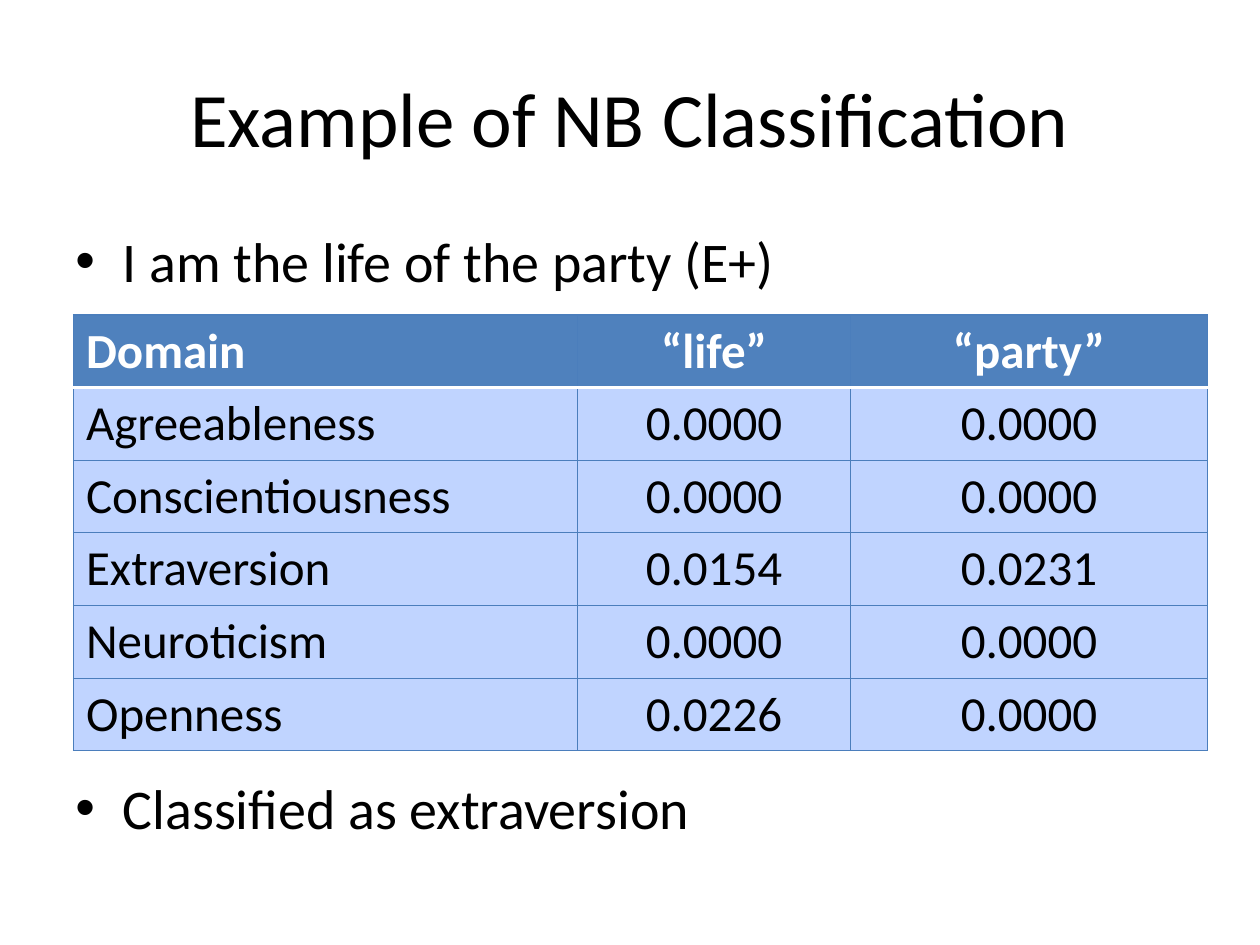
from dataclasses import dataclass

import pptx
import pptx.dml.color
import pptx.enum.text
import pptx.oxml
import pptx.oxml.ns
import pptx.util

Pt = pptx.util.Pt
ALIGN = pptx.enum.text.PP_ALIGN
ANCHOR = pptx.enum.text.MSO_ANCHOR
NS = pptx.oxml.ns.nsdecls("a")
FONT = "Calibri"
BLACK, WHITE, BORDER = "000000", "FFFFFF", "4B7EBC"
HEADER_FILL, BODY_FILL = "4F81BD", "C0D4FF"


@dataclass
class DomainRow:
    name: str
    life: str
    party: str


ROWS = [
    DomainRow("Domain", "“life”", "“party”"),
    DomainRow("Agreeableness", "0.0000", "0.0000"),
    DomainRow("Conscientiousness", "0.0000", "0.0000"),
    DomainRow("Extraversion", "0.0154", "0.0231"),
    DomainRow("Neuroticism", "0.0000", "0.0000"),
    DomainRow("Openness", "0.0226", "0.0000"),
]
COL_WIDTHS = [288, 156, 204]
ROW_HEIGHT = 41.5


def rgb(value: str) -> pptx.dml.color.RGBColor:
    return pptx.dml.color.RGBColor.from_string(value)


def write(p, text: str, *, size: float, color: str = BLACK, bold: bool = False,
          align=ALIGN.LEFT, before: float = 0) -> None:
    p.alignment = align
    p.space_before = Pt(before)
    r = p.add_run()
    r.text = text
    r.font.name, r.font.size, r.font.bold = FONT, Pt(size), bold
    r.font.color.rgb = rgb(color)


def add_box(s, left: float, top: float, width: float, height: float, anchor):
    tf = s.shapes.add_textbox(Pt(left), Pt(top), Pt(width), Pt(height)).text_frame
    tf.word_wrap = True
    tf.vertical_anchor = anchor
    return tf


def add_bullet(p, indent: float) -> None:
    pPr = p._p.get_or_add_pPr()
    pPr.set("marL", str(Pt(indent)))
    pPr.set("indent", str(-Pt(indent)))
    pPr.append(pptx.oxml.parse_xml(f'<a:buFont {NS} typeface="Arial"/>'))
    pPr.append(pptx.oxml.parse_xml(f'<a:buChar {NS} char="•"/>'))


def add_border(cell, side: str, color: str, width: float) -> None:
    cell._tc.get_or_add_tcPr().append(pptx.oxml.parse_xml(
        f'<a:ln{side} {NS} w="{Pt(width)}"><a:solidFill><a:srgbClr val="{color}"/>'
        f'</a:solidFill></a:ln{side}>'))


def format_cell(cell, text: str, row: int, col: int) -> None:
    header = row == 0
    for side in "LRTB":
        under_header = (row, side) in ((0, "B"), (1, "T"))
        add_border(cell, side, *((WHITE, 2) if under_header else (BORDER, 0.75)))
    cell.fill.solid()
    cell.fill.fore_color.rgb = rgb(HEADER_FILL if header else BODY_FILL)
    cell.vertical_anchor = ANCHOR.MIDDLE
    write(cell.text_frame.paragraphs[0], text, size=28, bold=header,
          color=WHITE if header else BLACK,
          align=ALIGN.CENTER if col else ALIGN.LEFT)


def add_domain_table(s, rows: list[DomainRow], left: float, top: float) -> None:
    table = s.shapes.add_table(len(rows), len(COL_WIDTHS), Pt(left), Pt(top),
                               Pt(sum(COL_WIDTHS)), Pt(ROW_HEIGHT * len(rows))).table
    for column, width in zip(table.columns, COL_WIDTHS):
        column.width = Pt(width)
    for i, row in enumerate(rows):
        table.rows[i].height = Pt(ROW_HEIGHT)
        for j, text in enumerate((row.name, row.life, row.party)):
            format_cell(table.cell(i, j), text, i, j)


def main() -> None:
    prs = pptx.Presentation()
    prs.slide_width, prs.slide_height = Pt(720), Pt(540)
    s = prs.slides.add_slide(prs.slide_layouts[6])

    # Title
    tf = add_box(s, 36, 21.6, 648, 90, ANCHOR.MIDDLE)
    write(tf.paragraphs[0], "Example of NB Classification", size=44, align=ALIGN.CENTER)

    # Bullets above and below the table
    tf = add_box(s, 36, 126, 648, 378, ANCHOR.TOP)
    bullets = [("I am the life of the party (E+)", 0), ("Classified as extraversion", 274)]
    for i, (text, before) in enumerate(bullets):
        p = tf.add_paragraph() if i else tf.paragraphs[0]
        add_bullet(p, 27)
        write(p, text, size=32, before=before)

    # Word probabilities by domain
    add_domain_table(s, ROWS, 42, 180)

    prs.save("out.pptx")


if __name__ == "__main__":
    main()
